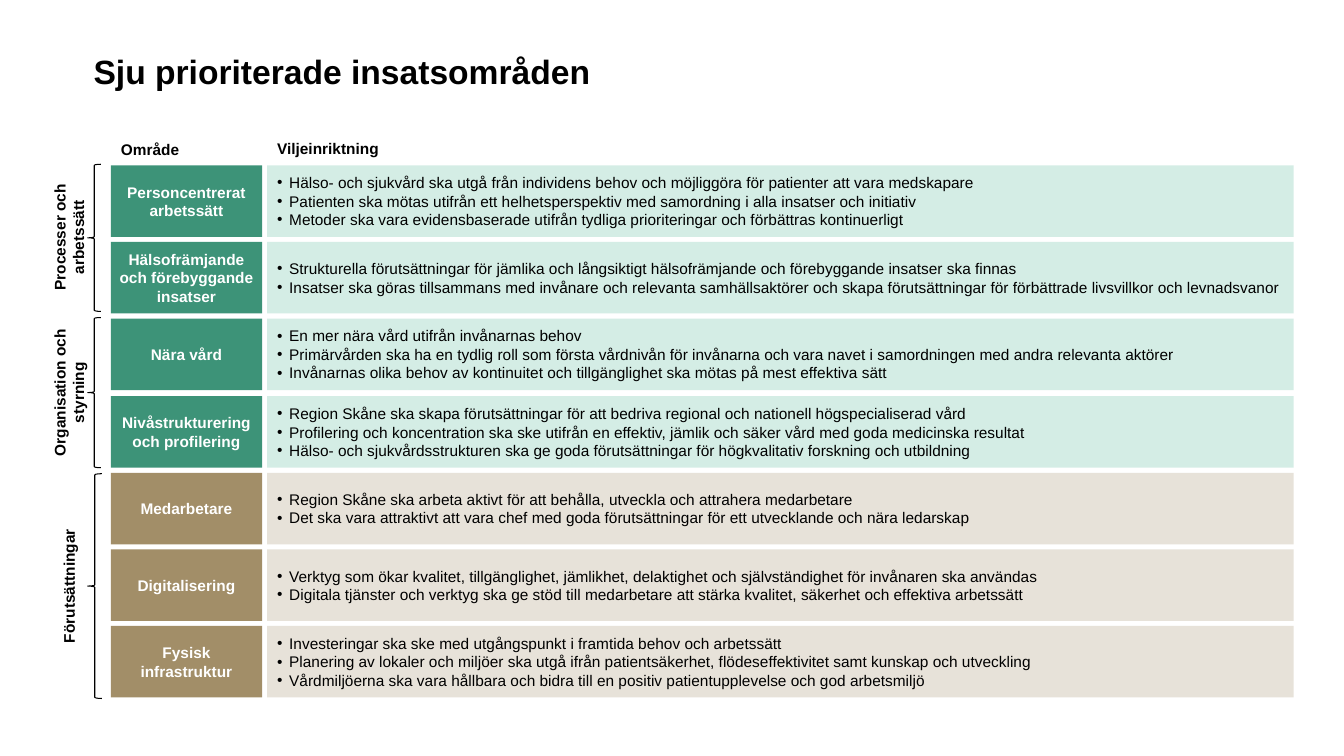
from lxml import etree
from pptx import Presentation
from pptx import util as u
from pptx.dml.color import RGBColor
from pptx.enum import shapes, text
from pptx.oxml.ns import qn

COLORS = {
    "black": "000000", "white": "FFFFFF",
    "green": "3D9378", "mint": "D4EDE5",
    "brown": "A28E68", "sand": "E7E2D9",
}
TOP, PITCH, HEIGHT = 1.64, 0.762, 0.71

AREAS = [
    ("Personcentrerat arbetssätt", 0.1, [
        "Hälso- och sjukvård ska utgå från individens behov och möjliggöra för patienter att vara medskapare",
        "Patienten ska mötas utifrån ett helhetsperspektiv med samordning i alla insatser och initiativ",
        "Metoder ska vara evidensbaserade utifrån tydliga prioriteringar och förbättras kontinuerligt"]),
    ("Hälsofrämjande och förebyggande insatser", 0.04, [
        "Strukturella förutsättningar för jämlika och långsiktigt hälsofrämjande och förebyggande insatser ska finnas",
        "Insatser ska göras tillsammans med invånare och relevanta samhällsaktörer och skapa förutsättningar för förbättrade livsvillkor och levnadsvanor"]),
    ("Nära vård", 0.1, [
        "En mer nära vård utifrån invånarnas behov",
        "Primärvården ska ha en tydlig roll som första vårdnivån för invånarna och vara navet i samordningen med andra relevanta aktörer",
        "Invånarnas olika behov av kontinuitet och tillgänglighet ska mötas på mest effektiva sätt"]),
    ("Nivåstrukturering och profilering", 0.04, [
        "Region Skåne ska skapa förutsättningar för att bedriva regional och nationell högspecialiserad vård",
        "Profilering och koncentration ska ske utifrån en effektiv, jämlik och säker vård med goda medicinska resultat",
        "Hälso- och sjukvårdsstrukturen ska ge goda förutsättningar för högkvalitativ forskning och utbildning"]),
    ("Medarbetare", 0.1, [
        "Region Skåne ska arbeta aktivt för att behålla, utveckla och attrahera medarbetare",
        "Det ska vara attraktivt att vara chef med goda förutsättningar för ett utvecklande och nära ledarskap"]),
    ("Digitalisering", 0.1, [
        "Verktyg som ökar kvalitet, tillgänglighet, jämlikhet, delaktighet och självständighet för invånaren ska användas",
        "Digitala tjänster och verktyg ska ge stöd till medarbetare att stärka kvalitet, säkerhet och effektiva arbetssätt"]),
    ("Fysisk infrastruktur", 0.1, [
        "Investeringar ska ske med utgångspunkt i framtida behov och arbetssätt",
        "Planering av lokaler och miljöer ska utgå ifrån patientsäkerhet, flödeseffektivitet samt kunskap och utveckling",
        "Vårdmiljöerna ska vara hållbara och bidra till en positiv patientupplevelse och god arbetsmiljö"]),
]

GROUPS = [
    ("Processer och arbetssätt", 1.63, 0.13, 1.46, 2.12, 0.47),
    ("Organisation och styrning", 3.15, 0.13, 1.49, 3.66, 0.47),
    ("Förutsättningar", 4.7, 0.14, 2.23, 5.67, 0.29),
]


class Board:
    def __init__(self, slide, font="Arial", size=11):
        self.slide, self.font, self.size = slide, font, size

    def color(self, name):
        return RGBColor.from_string(COLORS[name])

    def fill_text(self, frame, lines, color="black", bold=False, size=None,
                  align=text.PP_ALIGN.LEFT, bullet=False):
        frame.word_wrap = True
        for i, line in enumerate(lines):
            para = frame.add_paragraph() if i else frame.paragraphs[0]
            para.text = line
            para.alignment = align
            if bullet:
                props = para._p.get_or_add_pPr()
                props.set("marL", str(u.Inches(0.12)))
                props.set("indent", str(u.Inches(-0.12)))
                etree.SubElement(props, qn("a:buFont")).set("typeface", "Arial")
                etree.SubElement(props, qn("a:buChar")).set("char", "•")
            para.font.name = self.font
            para.font.size = u.Pt(size or self.size)
            para.font.bold = bold
            para.font.color.rgb = self.color(color)

    def label(self, line, box, turn=0, size=None, anchor=text.MSO_ANCHOR.TOP,
              align=text.PP_ALIGN.LEFT):
        shape = self.slide.shapes.add_textbox(*map(u.Inches, box))
        shape.rotation = turn
        shape.text_frame.vertical_anchor = anchor
        self.fill_text(shape.text_frame, [line], bold=True, size=size, align=align)

    def panel(self, lines, box, fill, inset=0.1, **style):
        shape = self.slide.shapes.add_shape(
            shapes.MSO_SHAPE.RECTANGLE, *map(u.Inches, box))
        shape.shadow.inherit = False
        shape.fill.solid()
        shape.fill.fore_color.rgb = self.color(fill)
        shape.line.fill.background()
        frame = shape.text_frame
        frame.margin_left = frame.margin_right = u.Inches(inset)
        frame.vertical_anchor = text.MSO_ANCHOR.MIDDLE
        self.fill_text(frame, lines, **style)

    def brace(self, box):
        shape = self.slide.shapes.add_shape(
            shapes.MSO_SHAPE.LEFT_BRACE, *map(u.Inches, box))
        shape.shadow.inherit = False
        shape.fill.background()
        shape.line.color.rgb = self.color("black")
        shape.line.width = u.Pt(0.75)


def main():
    deck = Presentation()
    deck.slide_width, deck.slide_height = u.Inches(13.33), u.Inches(7.5)
    board = Board(deck.slides.add_slide(deck.slide_layouts[6]))
    center = text.PP_ALIGN.CENTER

    board.label("Sju prioriterade insatsområden", (0.83, 0.23, 11.5, 0.96),
                size=24, anchor=text.MSO_ANCHOR.MIDDLE)
    board.label("Område", (1.1, 1.34, 1.5, 0.29))
    board.label("Viljeinriktning", (2.65, 1.33, 5.17, 0.29))

    for name, top, width, height, y, depth in GROUPS:
        board.brace((0.87, top, width, height))
        board.label(name, (-0.24, y, 1.85, depth), turn=270, align=center)

    for row, (name, inset, goals) in enumerate(AREAS):
        top = round(TOP + row * PITCH, 2)
        dark, light = ("green", "mint") if row < 4 else ("brown", "sand")
        board.panel([name], (1.1, top, 1.5, HEIGHT), dark, inset,
                    color="white", bold=True, align=center)
        board.panel(goals, (2.65, top, 10.18, HEIGHT), light, bullet=True)

    deck.save("out.pptx")


if __name__ == "__main__":
    main()
